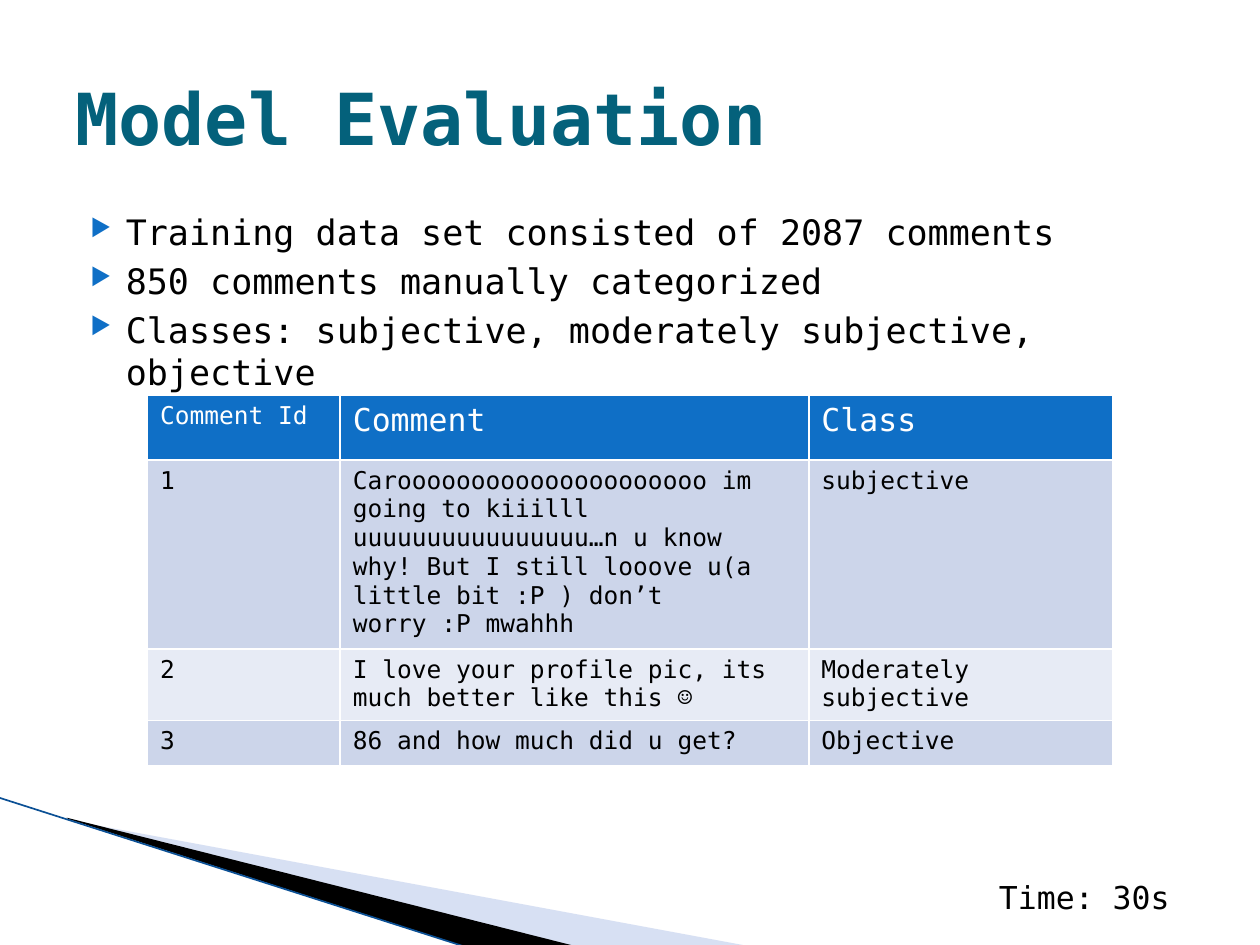
from lxml.etree import SubElement
from pptx import Presentation
from pptx.dml.color import RGBColor
from pptx.enum.shapes import MSO_CONNECTOR as Connector
from pptx.enum.text import MSO_ANCHOR as Anchor
from pptx.oxml import parse_xml
from pptx.oxml.ns import nsdecls, qn
from pptx.util import Inches, Pt

BLACK = RGBColor(0x00, 0x00, 0x00)
WHITE = RGBColor(0xFF, 0xFF, 0xFF)
TEAL = RGBColor(0x04, 0x61, 0x7B)
BLUE = RGBColor(0x0F, 0x6F, 0xC6)
EDGE_BLUE = RGBColor(0x0B, 0x50, 0x95)
PALE_BLUE = RGBColor(0x9D, 0xB2, 0xE1)
BAND_DARK = RGBColor(0xCC, 0xD5, 0xEA)
BAND_LIGHT = RGBColor(0xE7, 0xEB, 0xF5)
FONT = "DejaVu Sans Mono"


def write_text(frame, *lines, size=14, color=BLACK, bold=False, anchor=Anchor.TOP, bullet=False):
    frame.word_wrap = True
    frame.vertical_anchor = anchor
    for number, line in enumerate(lines):
        paragraph = frame.add_paragraph() if number else frame.paragraphs[0]
        run = paragraph.add_run()
        run.text = line
        run.font.name = FONT
        run.font.size = Pt(size)
        run.font.bold = bold
        run.font.color.rgb = color
        if bullet:
            paragraph.space_before = Pt(4)
            properties = paragraph._p.get_or_add_pPr()
            properties.set("marL", str(Inches(0.4)))
            properties.set("indent", str(Inches(-0.28)))
            bullet_color = SubElement(properties, qn("a:buClr"))
            SubElement(bullet_color, qn("a:srgbClr"), val=str(BLUE))
            SubElement(properties, qn("a:buSzPct"), val="68000")
            SubElement(properties, qn("a:buChar"), char="▶")


presentation = Presentation()
presentation.slide_width = Inches(10)
presentation.slide_height = Inches(7.5)
slide = presentation.slides.add_slide(presentation.slide_layouts[6])
shapes = slide.shapes

wedges = [
    ([(0.55, 6.51), (5.95, 7.51), (4.56, 7.51), (0.55, 6.5)], PALE_BLUE, 40),
    ([(0.53, 6.49), (4.57, 7.51), (3.72, 7.52), (0.54, 6.5)], BLACK, 100),
]
for points, color, opacity in wedges:
    corners = [(Inches(x), Inches(y)) for x, y in points]
    builder = shapes.build_freeform(*corners[0])
    builder.add_line_segments(corners[1:], close=True)
    wedge = builder.convert_to_shape()
    wedge.shadow.inherit = False
    wedge.fill.solid()
    wedge.fill.fore_color.rgb = color
    wedge.line.fill.background()
    if opacity < 100:
        fill_color = wedge._element.spPr.find(qn("a:solidFill"))[0]
        SubElement(fill_color, qn("a:alpha"), val=str(opacity * 1000))

edge = shapes.add_connector(
    Connector.STRAIGHT, Inches(-0.01), Inches(6.33), Inches(3.71), Inches(7.52)
)
edge.line.color.rgb = EDGE_BLUE
edge.line.width = Pt(0.95)
SubElement(edge._element.spPr, qn("a:effectLst"))

body = shapes.add_textbox(Inches(0.5), Inches(1.62), Inches(9), Inches(4.95))
write_text(
    body.text_frame,
    "Training data set consisted of 2087 comments",
    "850 comments manually categorized",
    "Classes: subjective, moderately subjective, objective",
    size=20,
    bullet=True,
)

title = shapes.add_textbox(Inches(0.5), Inches(0.3), Inches(9), Inches(1.25))
write_text(
    title.text_frame, "Model Evaluation", size=41, color=TEAL, bold=True, anchor=Anchor.MIDDLE
)

rows = [
    ("Comment Id", "Comment", "Class"),
    (
        "1",
        "Carooooooooooooooooooooo im going to kiiilll uuuuuuuuuuuuuuuu…n u know why! "
        "But I still looove u(a little bit :P ) don’t worry :P mwahhh",
        "subjective",
    ),
    ("2", "I love your profile pic, its much better like this ☺", "Moderately subjective"),
    ("3", "86 and how much did u get?", "Objective"),
]
column_widths = [1.53, 3.72, 2.41]
row_heights = [0.51, 1.34, 0.56, 0.36]
table = shapes.add_table(
    len(rows), len(column_widths), Inches(1.17), Inches(3.14),
    Inches(sum(column_widths)), Inches(sum(row_heights)),
).table
for column, width in zip(table.columns, column_widths):
    column.width = Inches(width)
for row, height in zip(table.rows, row_heights):
    row.height = Inches(height)

for row_number, row in enumerate(rows):
    header = row_number == 0
    fill = BLUE if header else (BAND_LIGHT, BAND_DARK)[row_number % 2]
    for column_number, text in enumerate(row):
        cell = table.cell(row_number, column_number)
        size = 18 if header and column_number else 14
        write_text(cell.text_frame, text, size=size, color=WHITE if header else BLACK)
        properties = cell._tc.get_or_add_tcPr()
        for side in ("lnL", "lnR", "lnT", "lnB"):
            properties.append(parse_xml(
                f'<a:{side} {nsdecls("a")} w="{Pt(1)}"><a:solidFill>'
                f'<a:srgbClr val="{WHITE}"/></a:solidFill></a:{side}>'
            ))
        cell.fill.solid()
        cell.fill.fore_color.rgb = fill

time_note = shapes.add_textbox(Inches(7.83), Inches(6.92), Inches(1.83), Inches(0.4))
write_text(time_note.text_frame, "Time: 30s", size=18)

presentation.save("out.pptx")
